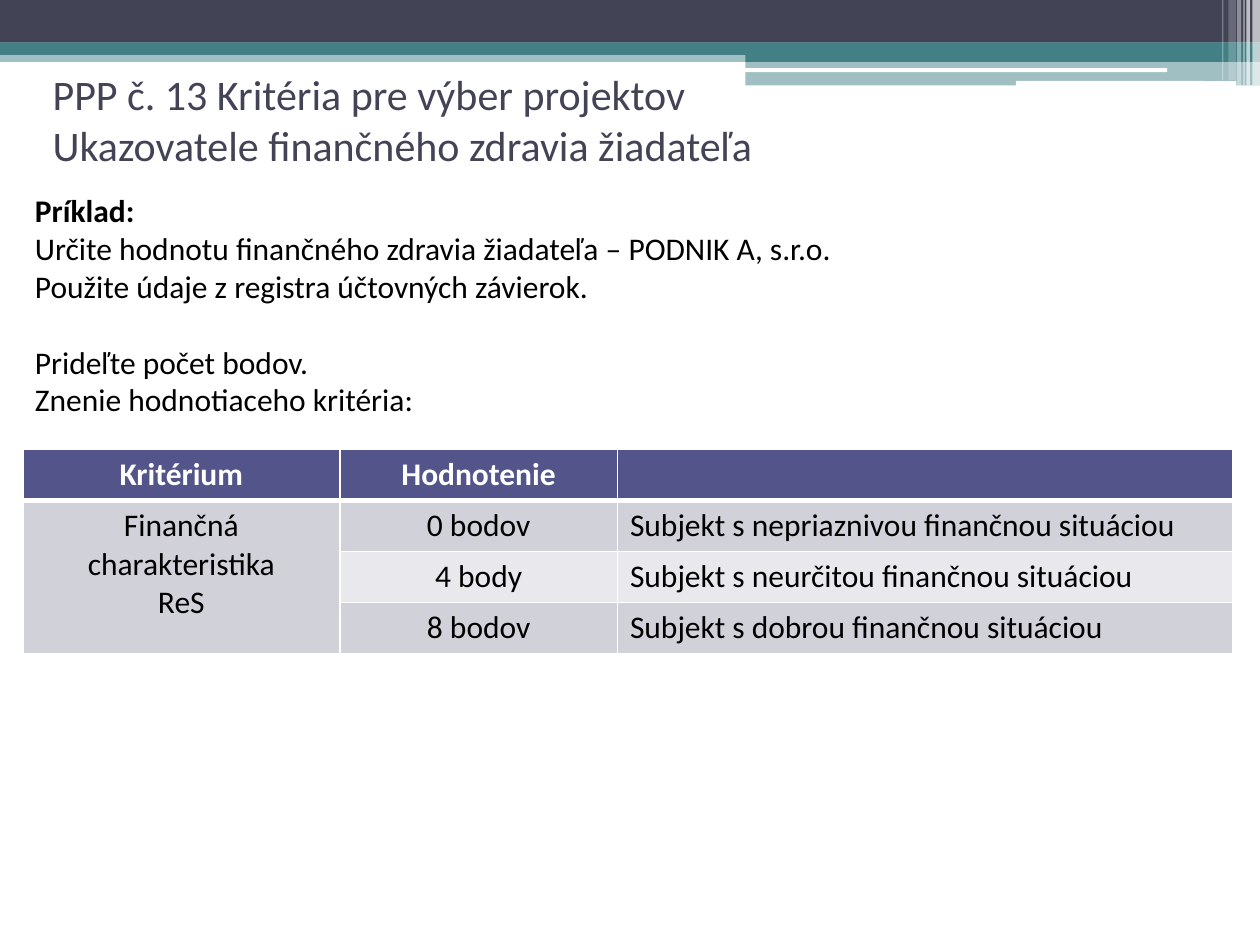
from lxml.etree import SubElement
from pptx import Presentation
from pptx.dml.color import RGBColor
from pptx.enum.shapes import MSO_SHAPE
from pptx.enum.text import MSO_ANCHOR, PP_ALIGN
from pptx.oxml.ns import qn
from pptx.util import Pt

NAVY = RGBColor(0x42, 0x44, 0x56)
TEAL = RGBColor(0x43, 0x80, 0x86)
WHITE = RGBColor(0xFF, 0xFF, 0xFF)
BLACK = RGBColor(0, 0, 0)
VIOLET = RGBColor(0x53, 0x54, 0x8A)
GREY = RGBColor(0xD1, 0xD1, 0xDA)
PALE = RGBColor(0xE9, 0xE9, 0xED)


def style(para, size, color, bold=False):
    for run in para.runs:
        run.font.name = "Calibri"
        run.font.size = Pt(size)
        run.font.bold = bold
        run.font.color.rgb = color


def edge(cell, side, width):
    """Draw one white cell border; call before the cell is filled."""
    line = SubElement(cell._tc.get_or_add_tcPr(), qn("a:" + side), w=str(Pt(width)))
    fill = SubElement(line, qn("a:solidFill"))
    SubElement(fill, qn("a:srgbClr"), val=str(WHITE))


deck = Presentation()
deck.slide_width, deck.slide_height = Pt(720), Pt(540)
slide = deck.slides.add_slide(deck.slide_layouts[6])
shapes = slide.shapes

# Header bands and stripes: kind, left, top, width, height, colour, opacity in %
RECT, ROUND = MSO_SHAPE.RECTANGLE, MSO_SHAPE.ROUNDED_RECTANGLE
bands = [
    (RECT, 0, 28.8, 720, 6.6, TEAL, 50),
    (RECT, 0, 0, 720, 24.4, NAVY, 100),
    (RECT, 0, 24.2, 720, 7.2, TEAL, 100),
    (RECT, 426, 28.2, 294, 7.2, TEAL, 100),
    (RECT, 426, 34.6, 294, 14.2, TEAL, 50),
    (ROUND, 425.5, 39, 241.5, 2.2, WHITE, 100),
    (ROUND, 580.5, 46.3, 126, 2.8, WHITE, 100),
]
stripes = [
    (715.6, 4.4, 48.8, 65),
    (712.2, 2, 48.8, 65),
    (710.5, 0.75, 48.8, 60),
    (707, 2.2, 48.8, 40),
    (702, 4.3, 46, 20),
    (698.4, 0.75, 46, 30),
]
bands += [(RECT, x, 0, w, h, WHITE, alpha) for x, w, h, alpha in stripes]
for kind, x, y, w, h, color, alpha in bands:
    band = shapes.add_shape(kind, Pt(x), Pt(y), Pt(w), Pt(h))
    band.shadow.inherit = False
    band.line.fill.background()
    band.fill.solid()
    band.fill.fore_color.rgb = color
    if alpha < 100:
        tint = band.fill._xPr.find(".//" + qn("a:srgbClr"))
        SubElement(tint, qn("a:alpha"), val=str(alpha * 1000))

title = shapes.add_textbox(Pt(23), Pt(43.2), Pt(683.3), Pt(50)).text_frame
title.word_wrap = True
title.vertical_anchor = MSO_ANCHOR.MIDDLE
title.text = "PPP č. 13 Kritéria pre výber projektov\vUkazovatele finančného zdravia žiadateľa"
style(title.paragraphs[0], 24, NAVY)

# Task text
lines = [
    "Príklad:",
    "Určite hodnotu finančného zdravia žiadateľa – PODNIK A, s.r.o.",
    "Použite údaje z registra účtovných závierok.",
    "Prideľte počet bodov.",
    "Znenie hodnotiaceho kritéria:",
]
task = shapes.add_textbox(Pt(4.3), Pt(105.8), Pt(701.3), Pt(138.2)).text_frame
task.word_wrap = True
task.text = "\n".join(lines)
for i, para in enumerate(task.paragraphs):
    para._p.get_or_add_pPr().set("marL", str(Pt(8.6)))
    style(para, 18, BLACK, bold=i == 0)
task.paragraphs[3].space_before = Pt(21.6)

# Scoring table
rows = [
    ("Kritérium", "Hodnotenie", ""),
    ("Finančná\ncharakteristika\nReS", "0 bodov", "Subjekt s nepriaznivou finančnou situáciou"),
    ("", "4 body", "Subjekt s neurčitou finančnou situáciou"),
    ("", "8 bodov", "Subjekt s dobrou finančnou situáciou"),
]
fills = [VIOLET, GREY, PALE, GREY]
frame = shapes.add_table(4, 3, Pt(13), Pt(256.8), Pt(691.5), Pt(116.8))
table = frame.table
for col, width in zip(table.columns, (181.2, 158.6, 351.7)):
    col.width = Pt(width)
for r, row in enumerate(rows):
    table.rows[r].height = Pt(29.2)
    for c, text in enumerate(row):
        cell = table.cell(r, c)
        edge(cell, "lnL", 1)
        edge(cell, "lnR", 1)
        edge(cell, "lnT", 3 if r == 1 else 1)
        edge(cell, "lnB", 3 if r == 0 else 1)
        cell.fill.solid()
        cell.fill.fore_color.rgb = GREY if r and c == 0 else fills[r]
        cell.text_frame.text = text
        for para in cell.text_frame.paragraphs:
            para.alignment = PP_ALIGN.LEFT if c == 2 else PP_ALIGN.CENTER
            style(para, 18, BLACK if r else WHITE, bold=r == 0)
table.cell(1, 0).merge(table.cell(3, 0))

deck.save("out.pptx")
